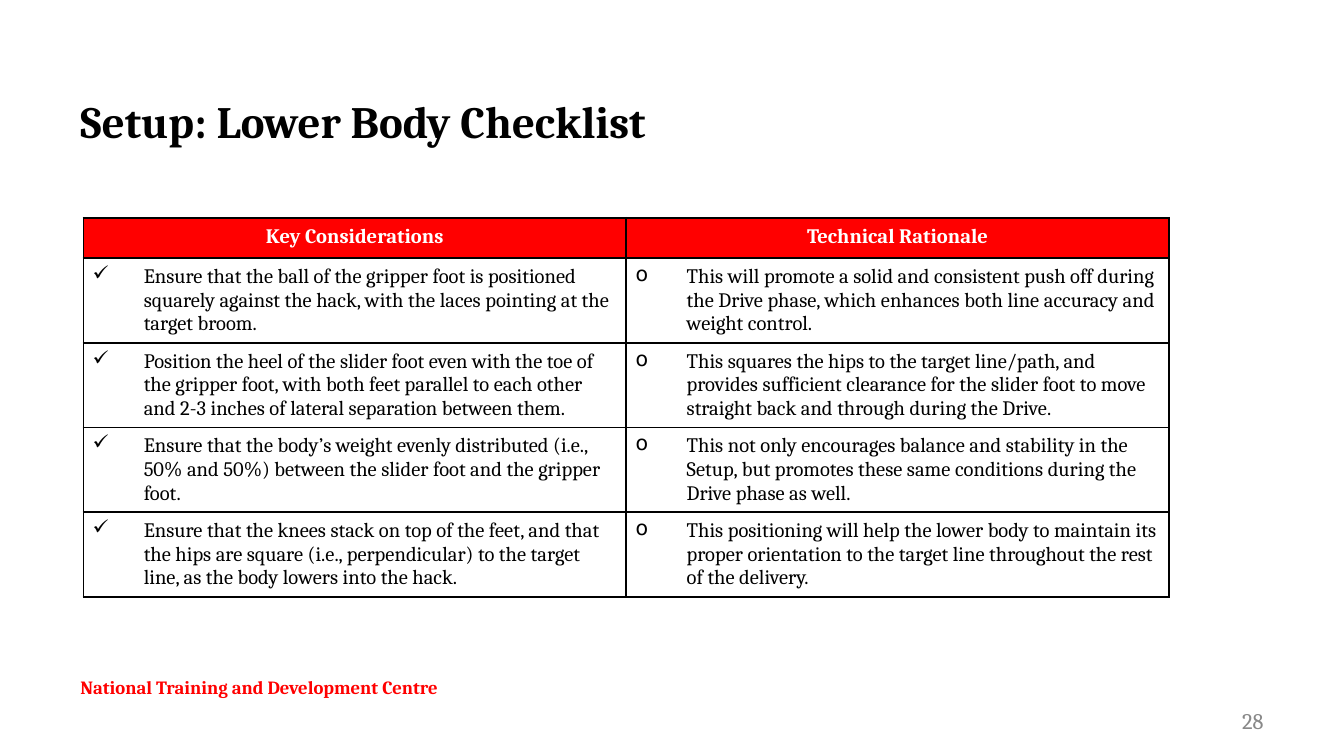
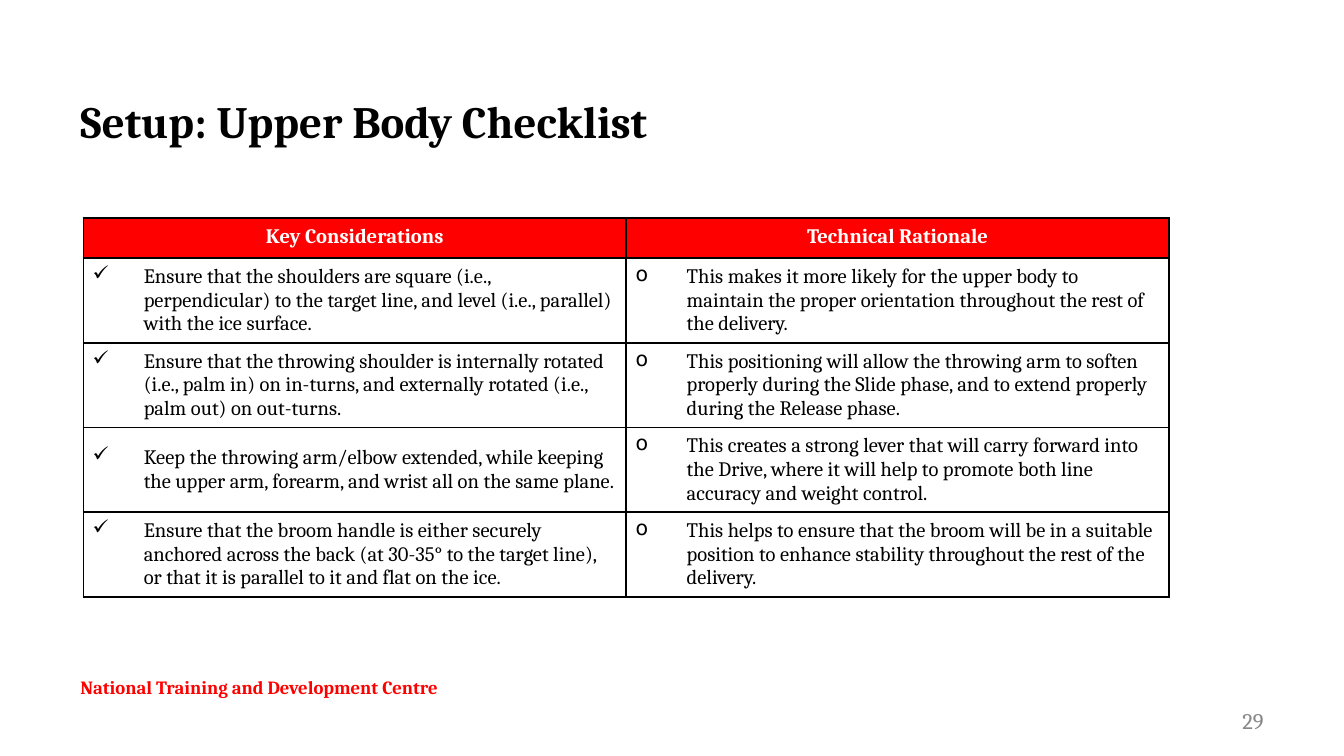
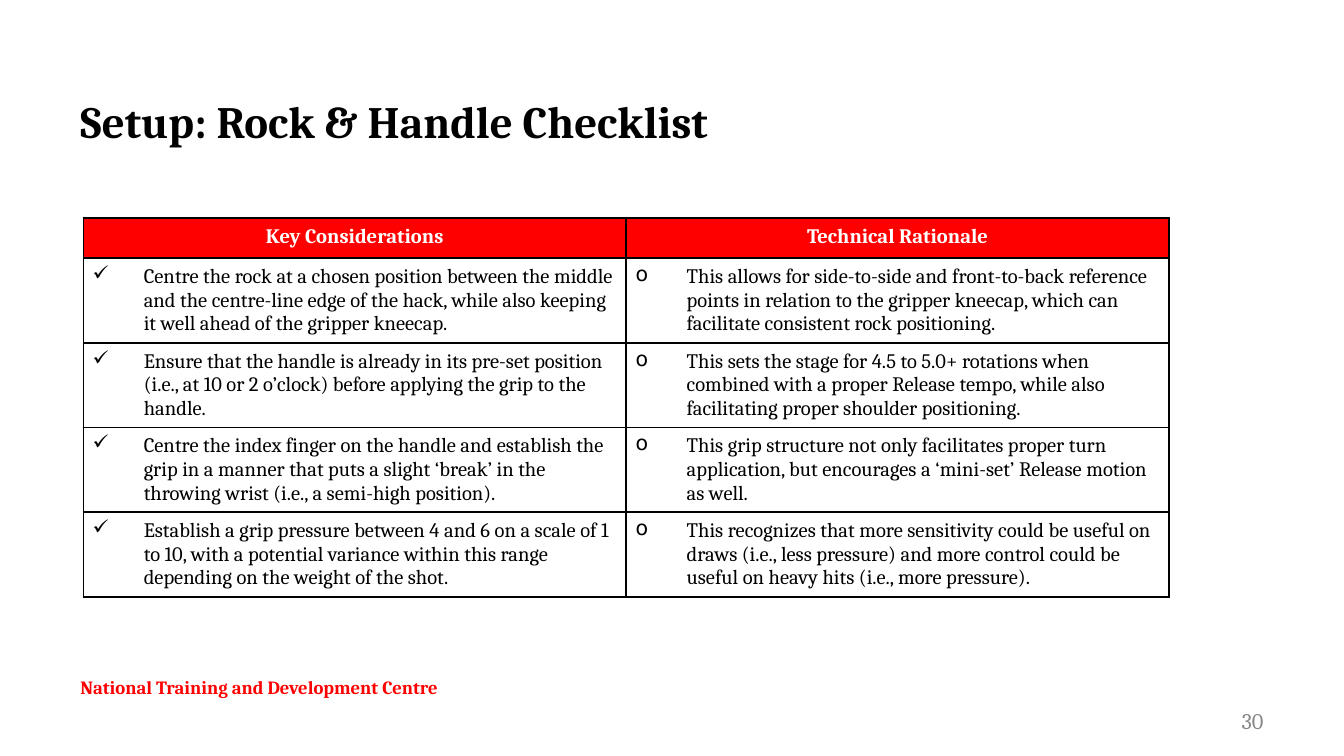
from lxml import etree
from pptx import Presentation
from pptx import util as u
from pptx.dml.color import RGBColor
from pptx.enum import text
from pptx.oxml import ns

FONT = "Cambria"
RED, BLACK, WHITE, GREY = "FF0000", "000000", "FFFFFF", "888888"
FOOTER = "National Training and Development Centre"
HEADINGS = ("Key Considerations", "Technical Rationale")
BULLETS = ("✓", "o")
FIRST_PAGE = 28
HEADER_HEIGHT, ROW_HEIGHT, COLUMN_WIDTH = 0.3, 0.63, 4.04

CHECKLISTS = [
    ("Setup: Lower Body Checklist", [
        ("Ensure that the ball of the gripper foot is positioned squarely against the hack, "
         "with the laces pointing at the target broom.",
         "This will promote a solid and consistent push off during the Drive phase, "
         "which enhances both line accuracy and weight control."),
        ("Position the heel of the slider foot even with the toe of the gripper foot, with both "
         "feet parallel to each other and 2-3 inches of lateral separation between them.",
         "This squares the hips to the target line/path, and provides sufficient clearance "
         "for the slider foot to move straight back and through during the Drive."),
        ("Ensure that the body’s weight evenly distributed (i.e., 50% and 50%) between "
         "the slider foot and the gripper foot.",
         "This not only encourages balance and stability in the Setup, but promotes these "
         "same conditions during the Drive phase as well."),
        ("Ensure that the knees stack on top of the feet, and that the hips are square "
         "(i.e., perpendicular) to the target line, as the body lowers into the hack.",
         "This positioning will help the lower body to maintain its proper orientation "
         "to the target line throughout the rest of the delivery."),
    ]),
    ("Setup: Upper Body Checklist", [
        ("Ensure that the shoulders are square (i.e., perpendicular) to the target line, "
         "and level (i.e., parallel) with the ice surface.",
         "This makes it more likely for the upper body to maintain the proper orientation "
         "throughout the rest of the delivery."),
        ("Ensure that the throwing shoulder is internally rotated (i.e., palm in) on in-turns, "
         "and externally rotated (i.e., palm out) on out-turns.",
         "This positioning will allow the throwing arm to soften properly during the Slide "
         "phase, and to extend properly during the Release phase."),
        ("Keep the throwing arm/elbow extended, while keeping the upper arm, forearm, "
         "and wrist all on the same plane.",
         "This creates a strong lever that will carry forward into the Drive, where it will "
         "help to promote both line accuracy and weight control."),
        ("Ensure that the broom handle is either securely anchored across the back (at 30-35° "
         "to the target line), or that it is parallel to it and flat on the ice.",
         "This helps to ensure that the broom will be in a suitable position to enhance "
         "stability throughout the rest of the delivery."),
    ]),
    ("Setup: Rock & Handle Checklist", [
        ("Centre the rock at a chosen position between the middle and the centre-line edge "
         "of the hack, while also keeping it well ahead of the gripper kneecap.",
         "This allows for side-to-side and front-to-back reference points in relation to the "
         "gripper kneecap, which can facilitate consistent rock positioning."),
        ("Ensure that the handle is already in its pre-set position (i.e., at 10 or 2 o’clock) "
         "before applying the grip to the handle.",
         "This sets the stage for 4.5 to 5.0+ rotations when combined with a proper Release "
         "tempo, while also facilitating proper shoulder positioning."),
        ("Centre the index finger on the handle and establish the grip in a manner that puts "
         "a slight ‘break’ in the throwing wrist (i.e., a semi-high position).",
         "This grip structure not only facilitates proper turn application, but encourages "
         "a ‘mini-set’ Release motion as well."),
        ("Establish a grip pressure between 4 and 6 on a scale of 1 to 10, with a potential "
         "variance within this range depending on the weight of the shot.",
         "This recognizes that more sensitivity could be useful on draws (i.e., less pressure) "
         "and more control could be useful on heavy hits (i.e., more pressure)."),
    ]),
]


def colour(value):
    return RGBColor.from_string(value)


def write(para, words, size, shade, bold=False, align=text.PP_ALIGN.LEFT):
    para.alignment = align
    span = para.add_run()
    span.text = words
    span.font.name = FONT
    span.font.size = u.Pt(size)
    span.font.bold = bold
    span.font.color.rgb = colour(shade)


# Widescreen, 16 to 9
deck = Presentation()
deck.slide_width = u.Inches(10)
deck.slide_height = u.Inches(10) * 9 // 16

middle, top = text.MSO_ANCHOR.MIDDLE, text.MSO_ANCHOR.TOP
left, right = text.PP_ALIGN.LEFT, text.PP_ALIGN.RIGHT

for number, (title, points) in enumerate(CHECKLISTS, FIRST_PAGE):
    page = deck.slides.add_slide(deck.slide_layouts[6])

    # Page number, title and footer
    for words, place, anchor, size, shade, bold, align in (
        (str(number), (7.17, 5.21, 2.33, 0.3), middle, 12, GREY, False, right),
        (title, (0.5, 0.43, 8.13, 0.94), middle, 24, BLACK, True, left),
        (FOOTER, (0.5, 4.98, 3.79, 0.44), top, 10, RED, True, left),
    ):
        box = page.shapes.add_textbox(*map(u.Inches, place))
        box.text_frame.word_wrap = True
        box.text_frame.vertical_anchor = anchor
        write(box.text_frame.paragraphs[0], words, size, shade, bold, align)

    # Checklist table
    rows = [HEADINGS] + points
    table = page.shapes.add_table(
        len(rows), len(HEADINGS), u.Inches(0.62), u.Inches(1.62),
        u.Inches(COLUMN_WIDTH * len(HEADINGS)),
        u.Inches(HEADER_HEIGHT + ROW_HEIGHT * len(points))).table
    table.horz_banding = False
    for column in table.columns:
        column.width = u.Inches(COLUMN_WIDTH)

    for row, entries in enumerate(rows):
        table.rows[row].height = u.Inches(ROW_HEIGHT if row else HEADER_HEIGHT)
        for column, words in enumerate(entries):
            cell = table.cell(row, column)
            para = cell.text_frame.paragraphs[0]

            # Black border on every side
            properties = cell._tc.get_or_add_tcPr()
            for side in ("a:lnL", "a:lnR", "a:lnT", "a:lnB"):
                line = etree.SubElement(properties, ns.qn(side), w=str(u.Pt(1)))
                fill = etree.SubElement(line, ns.qn("a:solidFill"))
                etree.SubElement(fill, ns.qn("a:srgbClr"), val=BLACK)

            if row == 0:
                cell.fill.solid()
                cell.fill.fore_color.rgb = colour(RED)
                write(para, words, 11, WHITE, True, text.PP_ALIGN.CENTER)
                continue

            # Bulleted point with a hanging indent
            cell.fill.background()
            cell.vertical_anchor = middle
            cell.margin_left = cell.margin_right = u.Inches(0.07)
            cell.margin_top = cell.margin_bottom = u.Inches(0.04)
            layout = para._p.get_or_add_pPr()
            layout.set("marL", str(u.Inches(0.38)))
            layout.set("indent", str(u.Inches(-0.38)))
            etree.SubElement(layout, ns.qn("a:buChar"), char=BULLETS[column])
            write(para, words, 11, BLACK)

deck.save("out.pptx")
